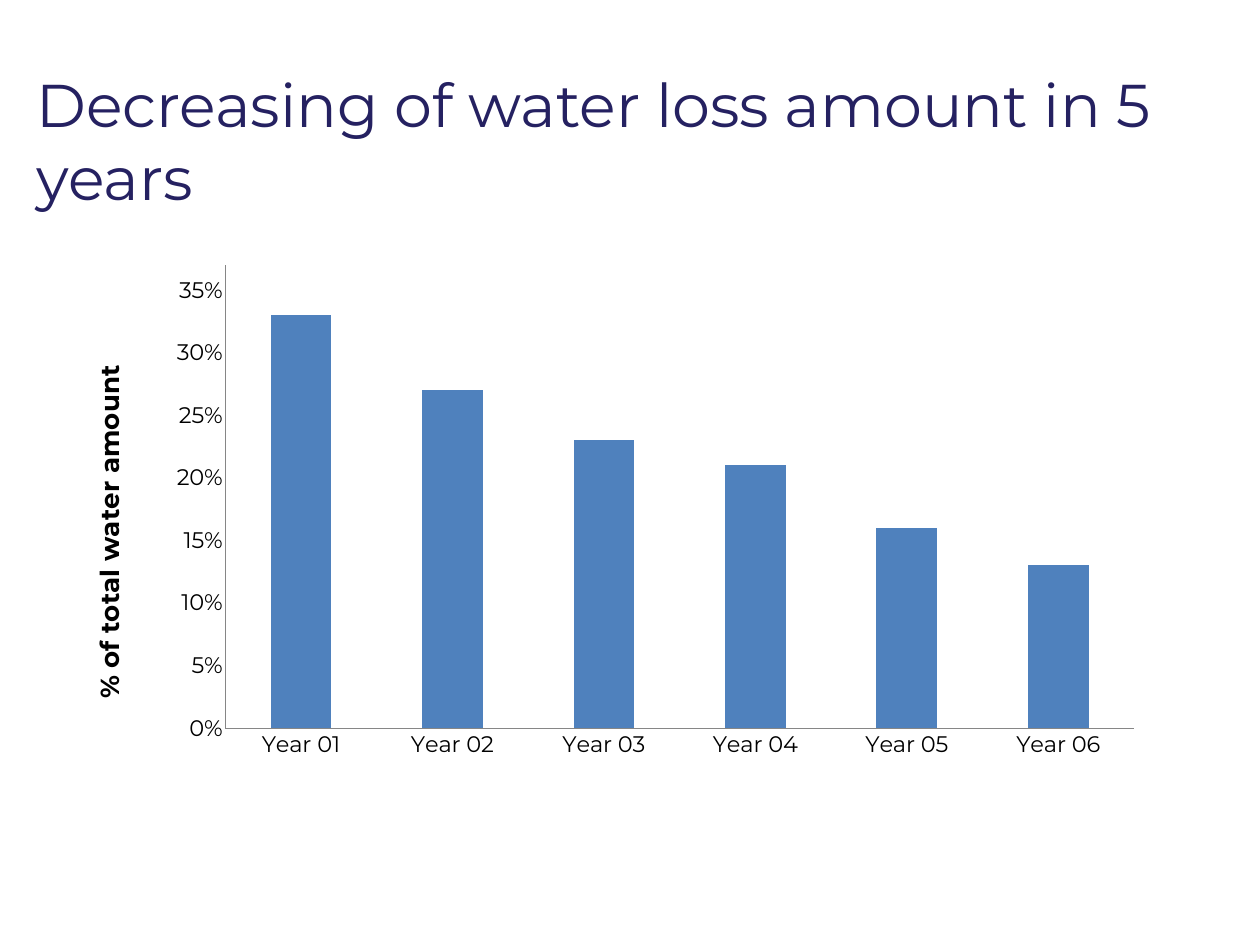
from dataclasses import dataclass

from lxml.etree import SubElement
from pptx import Presentation
from pptx.chart.chart import Chart
from pptx.chart.data import CategoryChartData
from pptx.dml.color import RGBColor
from pptx.enum.chart import XL_CHART_TYPE, XL_TICK_MARK
from pptx.enum.text import MSO_ANCHOR, MSO_AUTO_SIZE, PP_ALIGN
from pptx.oxml.ns import qn
from pptx.slide import Slide
from pptx.text.text import Font
from pptx.util import Inches, Pt

COLORS = {"title": "252161", "text": "000000", "bar": "4F81BD", "axis": "868686"}
FONT_NAME = "Montserrat"


@dataclass
class YearLoss:
    year: str
    share: float


LOSSES = [
    YearLoss(f"Year {number:02d}", share)
    for number, share in enumerate([0.33, 0.27, 0.23, 0.21, 0.16, 0.13], start=1)
]


def format_font(font: Font, size: float, color: str, bold: bool = False) -> None:
    font.name = FONT_NAME
    font.size = Pt(size)
    font.bold = bold
    font.color.rgb = RGBColor.from_string(COLORS[color])


def set_layout(parent, **settings: str | float) -> None:
    layout = parent.find(qn("c:layout"))
    if layout is None:
        layout = parent.makeelement(qn("c:layout"))
        text = parent.find(qn("c:tx"))
        parent.insert(0 if text is None else parent.index(text) + 1, layout)
    manual = SubElement(layout, qn("c:manualLayout"))
    for name, value in settings.items():
        SubElement(manual, qn(f"c:{name}")).set("val", str(value))


def add_title(slide: Slide) -> None:
    title = slide.shapes.title
    title.left, title.top = Inches(0.56), Inches(1.04)
    title.width, title.height = Inches(18.25), Inches(1.13)
    frame = title.text_frame
    frame.text = "Decreasing of water loss amount in 5 years"
    frame.margin_left = frame.margin_top = frame.margin_right = frame.margin_bottom = 0
    frame.word_wrap = True
    frame.vertical_anchor = MSO_ANCHOR.TOP
    frame.auto_size = MSO_AUTO_SIZE.SHAPE_TO_FIT_TEXT
    paragraph = frame.paragraphs[0]
    paragraph.alignment = PP_ALIGN.LEFT
    format_font(paragraph.runs[0].font, 67, "title")


def format_axes(chart: Chart) -> None:
    for axis in (chart.category_axis, chart.value_axis):
        axis.major_tick_mark = axis.minor_tick_mark = XL_TICK_MARK.NONE
        axis.has_major_gridlines = False
        axis.format.line.color.rgb = RGBColor.from_string(COLORS["axis"])
        axis.format.line.width = Pt(0.75)
        format_font(axis.tick_labels.font, 25, "text")

    value_axis = chart.value_axis
    value_axis.minimum_scale, value_axis.maximum_scale = 0, 0.37
    value_axis.major_unit = 0.05
    value_axis.tick_labels.number_format = "0%"
    value_axis.tick_labels.number_format_is_linked = False
    frame = value_axis.axis_title.text_frame
    frame.text = "% of total water amount"
    format_font(frame.paragraphs[0].runs[0].font, 29, "text", bold=True)
    set_layout(value_axis.axis_title._element, xMode="edge", yMode="edge", x=0.03, y=0.21)


def add_loss_chart(slide: Slide) -> None:
    data = CategoryChartData(number_format="0%")
    data.categories = [loss.year for loss in LOSSES]
    data.add_series("Series 1", [loss.share for loss in LOSSES])
    chart = slide.shapes.add_chart(
        XL_CHART_TYPE.COLUMN_CLUSTERED,
        Inches(0.81), Inches(3.88), Inches(17.08), Inches(8), data,
    ).chart
    chart.has_title = False
    chart.has_legend = False
    format_font(chart.font, 29, "text")
    plot = chart.plots[0]
    plot.gap_width = 150
    plot.vary_by_categories = False
    fill = plot.series[0].format.fill
    fill.solid()
    fill.fore_color.rgb = RGBColor.from_string(COLORS["bar"])
    format_axes(chart)
    set_layout(
        chart._chartSpace.chart.plotArea,
        layoutTarget="inner", xMode="edge", yMode="edge",
        x=0.156, y=0.026, w=0.821, h=0.893,
    )


def main() -> None:
    presentation = Presentation()
    presentation.slide_width = Inches(19.44)
    presentation.slide_height = Inches(14.58)
    slide = presentation.slides.add_slide(presentation.slide_layouts.get_by_name("Title Only"))
    add_title(slide)
    add_loss_chart(slide)
    presentation.save("out.pptx")


if __name__ == "__main__":
    main()
